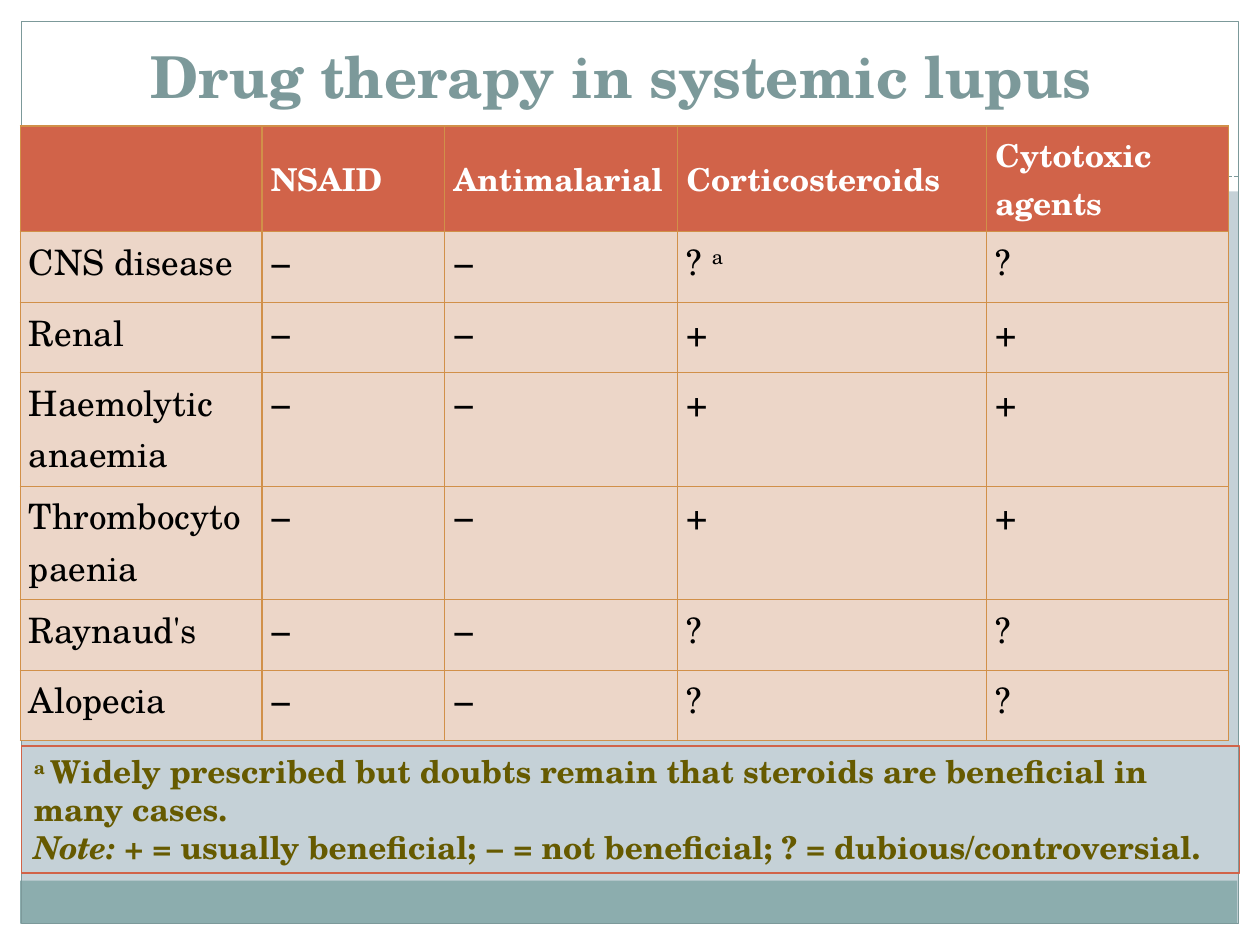
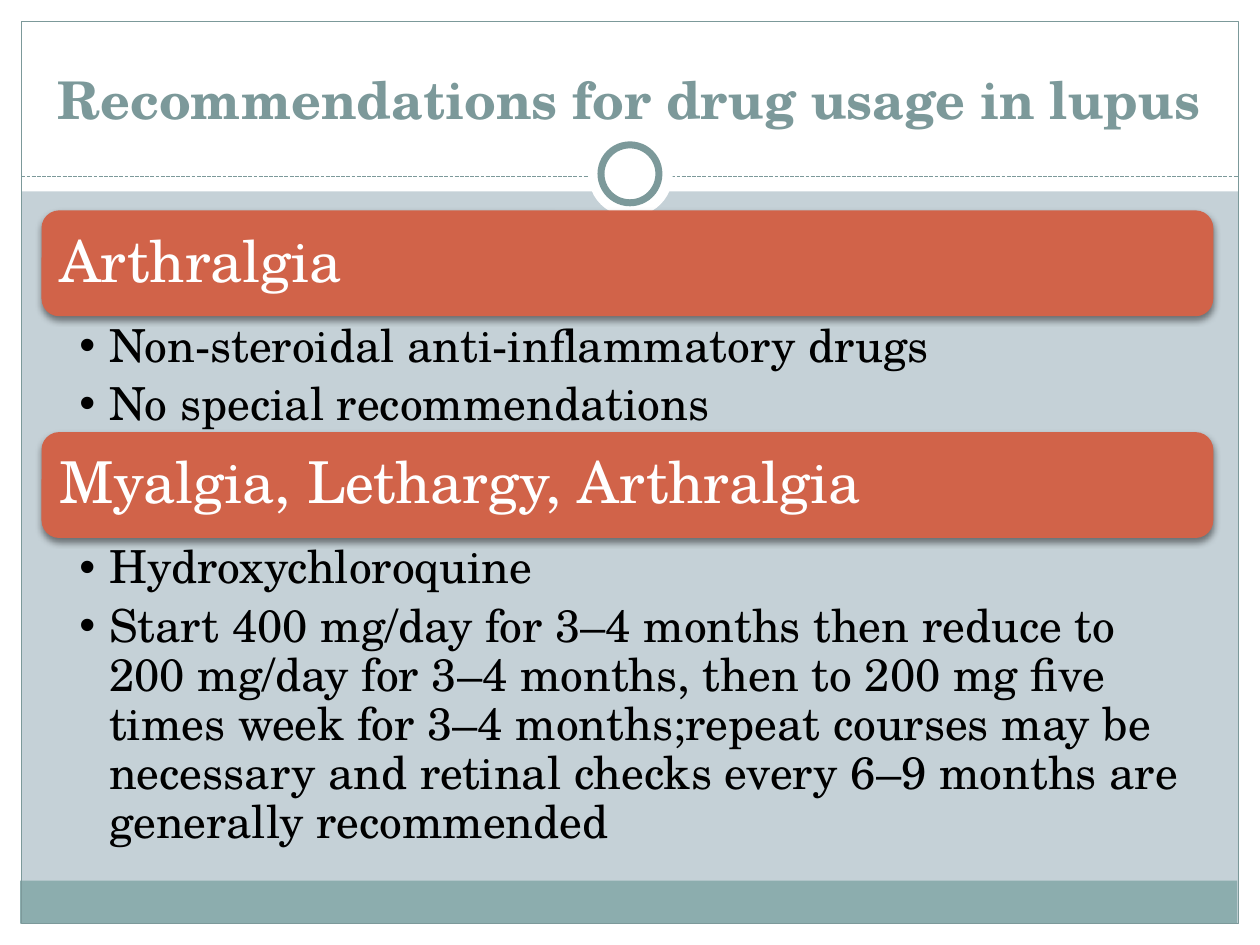
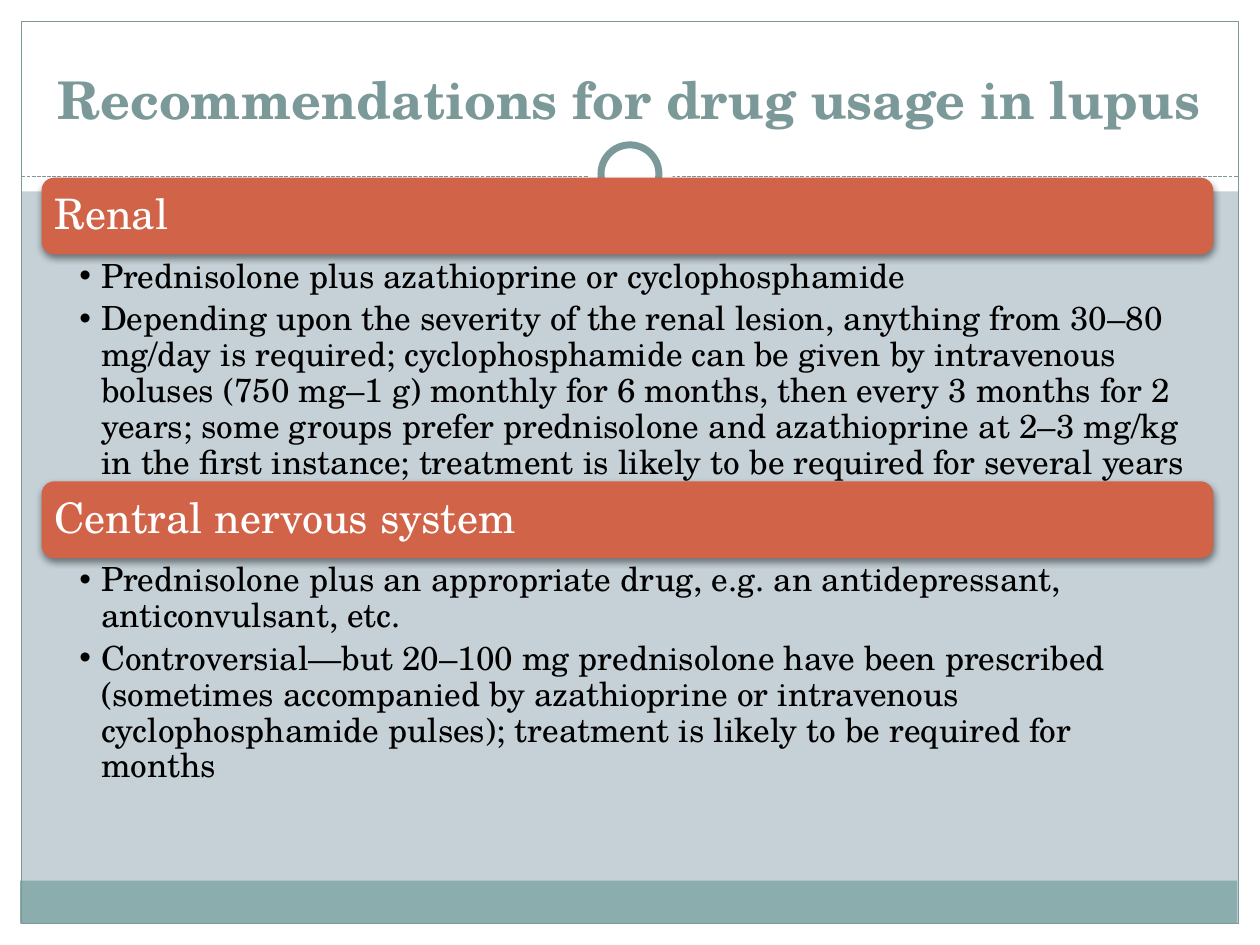
from lxml import etree
from pptx import Presentation
from pptx.dml.color import RGBColor
from pptx.enum.dml import MSO_LINE
from pptx.enum.shapes import MSO_CONNECTOR, MSO_SHAPE
from pptx.enum.text import MSO_ANCHOR, MSO_AUTO_SIZE, PP_ALIGN
from pptx.oxml.ns import qn
from pptx.util import Inches, Pt

RECT, ROUND, OVAL = MSO_SHAPE.RECTANGLE, MSO_SHAPE.ROUNDED_RECTANGLE, MSO_SHAPE.OVAL
TOP, MIDDLE, BOTTOM = MSO_ANCHOR.TOP, MSO_ANCHOR.MIDDLE, MSO_ANCHOR.BOTTOM
LEFT, CENTER = PP_ALIGN.LEFT, PP_ALIGN.CENTER
SYS_DASH = MSO_LINE.SQUARE_DOT
STRAIGHT = MSO_CONNECTOR.STRAIGHT
NO_AUTOFIT = MSO_AUTO_SIZE.NONE
TITLE_ONLY, TWO_CONTENT = 5, 3

FONT = "TeX Gyre Schola"
WHITE = RGBColor(0xFF, 0xFF, 0xFF)
BLACK = RGBColor(0, 0, 0)
BACKGROUND = RGBColor(0xC5, 0xD1, 0xD7)
TEAL = RGBColor(0x7C, 0x99, 0x9A)
FOOTER = RGBColor(0x8C, 0xAD, 0xAE)
RED = RGBColor(0xD1, 0x63, 0x49)
PEACH = RGBColor(0xEC, 0xD6, 0xC8)
OLIVE = RGBColor(0x66, 0x5A, 0x00)
GRID = "D19049"

COLUMNS = [1.92, 1.45, 1.85, 2.45, 1.92]
ROWS = [0.84, 0.56, 0.56, 0.9, 0.9, 0.56, 0.56]
THERAPY = [
    ["", "NSAID", "Antimalarial", "Corticosteroids", "Cytotoxic agents"],
    ["CNS disease", "−", "−", "? ", "?"],
    ["Renal", "−", "−", "+", "+"],
    ["Haemolytic anaemia", "−", "−", "+", "+"],
    ["Thrombocytopaenia", "−", "−", "+", "+"],
    ["Raynaud's", "−", "−", "?", "?"],
    ["Alopecia", "−", "−", "?", "?"],
]
FOOTNOTE_CELL = (1, 3)

FIRST_RECOMMENDATIONS = [
    ("Arthralgia", 0.92, [
        "Non-steroidal anti-inflammatory drugs",
        "No special recommendations"]),
    ("Myalgia, Lethargy, Arthralgia", 2.39, [
        "Hydroxychloroquine",
        "Start 400 mg/day for 3–4 months then reduce to 200 mg/day for 3–4 months, "
        "then to 200 mg five times week for 3–4 months;repeat courses may be "
        "necessary and retinal checks every 6–9 months are generally recommended"]),
]
SECOND_RECOMMENDATIONS = [
    ("Renal", 1.8, [
        "Prednisolone plus azathioprine or cyclophosphamide",
        "Depending upon the severity of the renal lesion, anything from 30–80 mg/day "
        "is required; cyclophosphamide can be given by intravenous boluses "
        "(750 mg–1 g) monthly for 6 months, then every 3 months for 2 years; some "
        "groups prefer prednisolone and azathioprine at 2–3 mg/kg in the first "
        "instance; treatment is likely to be required for several years"]),
    ("Central nervous system", 1.49, [
        "Prednisolone plus an appropriate drug, e.g. an antidepressant, "
        "anticonvulsant, etc.",
        "Controversial—but 20–100 mg prednisolone have been prescribed (sometimes "
        "accompanied by azathioprine or intravenous cyclophosphamide pulses); "
        "treatment is likely to be required for months"]),
]


def write(p, text, size, color=BLACK, bold=False, italic=False, raised=False):
    r = p.add_run()
    r.text = text
    font = r.font
    font.name, font.size, font.bold, font.italic = FONT, Pt(size), bold, italic
    font.color.rgb = color
    if raised:
        r._r.get_or_add_rPr().set("baseline", "30000")


def place(sp, left, top, width, height):
    sp.left, sp.top = Inches(left), Inches(top)
    sp.width, sp.height = Inches(width), Inches(height)


def set_frame(tf, anchor, side=0.1, end=0.05, right=None):
    tf.word_wrap = True
    tf.auto_size = NO_AUTOFIT
    tf.vertical_anchor = anchor
    tf.margin_left = Inches(side)
    tf.margin_right = Inches(side if right is None else right)
    tf.margin_top = tf.margin_bottom = Inches(end)


def add_box(slide, kind, box, fill=None, line=None, weight=0.75):
    sp = slide.shapes.add_shape(kind, *map(Inches, box))
    sp.shadow.inherit = False
    if fill is None:
        sp.fill.background()
    else:
        sp.fill.solid()
        sp.fill.fore_color.rgb = fill
    if line is None:
        sp.line.fill.background()
    else:
        sp.line.color.rgb = line
        sp.line.width = Pt(weight)
    return sp


def add_shadow(sp):
    effects = sp._element.spPr.find(qn("a:effectLst"))
    shadow = etree.SubElement(effects, qn("a:outerShdw"), blurRad=str(Pt(4)),
                              dist=str(Pt(2)), dir="5400000", rotWithShape="0")
    color = etree.SubElement(shadow, qn("a:srgbClr"), val="000000")
    etree.SubElement(color, qn("a:alpha"), val="45000")


def build_master(prs, slide):
    """Draw the shared frame on an empty slide and move it behind the master's text."""
    master = prs.slide_master
    master.background.fill.solid()
    master.background.fill.fore_color.rgb = BACKGROUND
    parts = [add_box(slide, RECT, box, WHITE) for box in (
        (0, 7.33, 10, 0.17), (0, 0, 10, 1.52), (0, 0, 0.17, 7.5), (9.83, 0, 0.17, 7.5))]
    parts.append(add_box(slide, RECT, (0.16, 6.99, 9.66, 0.34), FOOTER))
    parts.append(add_box(slide, RECT, (0.17, 0.17, 9.66, 7.16), line=TEAL))
    rule = slide.shapes.add_connector(
        STRAIGHT, Inches(0.17), Inches(1.4), Inches(9.83), Inches(1.4))
    rule.line.color.rgb = TEAL
    rule.line.width = Pt(0.75)
    rule.line.dash_style = SYS_DASH
    etree.SubElement(rule._element.spPr, qn("a:effectLst"))
    parts.append(rule)
    parts.append(add_box(slide, OVAL, (4.67, 1.05, 0.67, 0.67), WHITE))
    parts.append(add_box(slide, OVAL, (4.77, 1.15, 0.46, 0.46), WHITE, TEAL, 4))
    tree = master.shapes._spTree
    for i, sp in enumerate(parts):
        sp._element.xpath(".//p:cNvPr")[0].set("id", str(100 + i))
        tree.insert(2 + i, sp._element)


def set_title(slide, text, size, height):
    title = slide.shapes.title
    place(title, 0.33, 0.25, 9.33, height)
    set_frame(title.text_frame, BOTTOM)
    p = title.text_frame.paragraphs[0]
    p.alignment = CENTER
    write(p, text, size, TEAL, bold=True)


def set_borders(cell):
    tc_pr = cell._tc.get_or_add_tcPr()
    for i, side in enumerate(("lnL", "lnR", "lnT", "lnB")):
        line = etree.Element(qn(f"a:{side}"), w=str(Pt(0.75)))
        fill = etree.SubElement(line, qn("a:solidFill"))
        etree.SubElement(fill, qn("a:srgbClr"), val=GRID)
        tc_pr.insert(i, line)


def add_therapy_table(slide, left, top):
    table = slide.shapes.add_table(
        len(ROWS), len(COLUMNS), Inches(left), Inches(top),
        Inches(sum(COLUMNS)), Inches(sum(ROWS))).table
    table.horz_banding = False
    for column, width in zip(table.columns, COLUMNS):
        column.width = Inches(width)
    for i, (row, height) in enumerate(zip(table.rows, ROWS)):
        row.height = Inches(height)
        header = i == 0
        for j, cell in enumerate(row.cells):
            cell.margin_left = cell.margin_right = Inches(0.07)
            cell.margin_top = cell.margin_bottom = Inches(0.03)
            cell.vertical_anchor = MIDDLE if header else TOP
            cell.fill.solid()
            cell.fill.fore_color.rgb = RED if header else PEACH
            set_borders(cell)
            p = cell.text_frame.paragraphs[0]
            if THERAPY[i][j]:
                write(p, THERAPY[i][j], 18 if header else 20,
                      WHITE if header else BLACK, bold=header)
            if (i, j) == FOOTNOTE_CELL:
                write(p, "a", 20, raised=True)


def add_footnote(slide, box):
    tf = add_box(slide, RECT, box, line=RED).text_frame
    set_frame(tf, TOP)
    note, key = tf.paragraphs[0], tf.add_paragraph()
    note.alignment = key.alignment = LEFT
    style = {"size": 18, "color": OLIVE, "bold": True}
    write(note, "a ", raised=True, **style)
    write(note, "Widely prescribed but doubts remain that steroids are beneficial "
                "in many cases.", **style)
    write(key, "Note: ", italic=True, **style)
    write(key, "+ = usually beneficial; − = not beneficial; "
               "? = dubious/controversial.", **style)


def add_heading(slide, box, text, size):
    sp = add_box(slide, ROUND, box, RED)
    add_shadow(sp)
    set_frame(sp.text_frame, MIDDLE, side=size * 0.003)
    p = sp.text_frame.paragraphs[0]
    p.alignment = LEFT
    p.line_spacing = 0.9
    write(p, text, size, WHITE)


def fill_list(body, box, items, size):
    """Put bullets in a body placeholder, with indents that follow the text size."""
    place(body, *box)
    tf = body.text_frame
    indent = size / 110
    set_frame(tf, TOP, side=0.3, end=size / 500, right=size / 100)
    for i, item in enumerate(items):
        p = tf.add_paragraph() if i else tf.paragraphs[0]
        p.line_spacing = 0.9
        p.space_before = Pt(0)
        p.space_after = Pt(size * 0.2)
        p_pr = p._p.get_or_add_pPr()
        p_pr.set("marL", str(Inches(indent)))
        p_pr.set("indent", str(-Inches(indent)))
        etree.SubElement(p_pr, qn("a:buChar"), char="•")
        write(p, item, size)


def build_therapy_slide(slide):
    set_title(slide, "Drug therapy in systemic lupus ", 33, 0.67)
    add_therapy_table(slide, 0.16, 1)
    add_footnote(slide, (0.17, 5.92, 9.67, 1.01))


def build_recommendations_slide(slide, sections, top, heading_height,
                                heading_size, list_size):
    set_title(slide, "Recommendations for drug usage in lupus ", 29.7, 0.83)
    left, width = 0.33, 9.3
    bodies = list(slide.placeholders)[1:]
    for body, (heading, list_height, items) in zip(bodies, sections):
        add_heading(slide, (left, top, width, heading_height), heading, heading_size)
        top += heading_height
        fill_list(body, (left, top, width, list_height), items, list_size)
        top += list_height


def main():
    prs = Presentation()
    prs.slide_width, prs.slide_height = Inches(10), Inches(7.5)
    therapy, first, second = (
        prs.slides.add_slide(prs.slide_layouts[i])
        for i in (TITLE_ONLY, TWO_CONTENT, TWO_CONTENT))
    build_master(prs, therapy)
    build_therapy_slide(therapy)
    build_recommendations_slide(first, FIRST_RECOMMENDATIONS, 1.67, 0.84, 33, 26)
    build_recommendations_slide(second, SECOND_RECOMMENDATIONS, 1.41, 0.61, 24, 19)
    prs.save("out.pptx")


if __name__ == "__main__":
    main()
